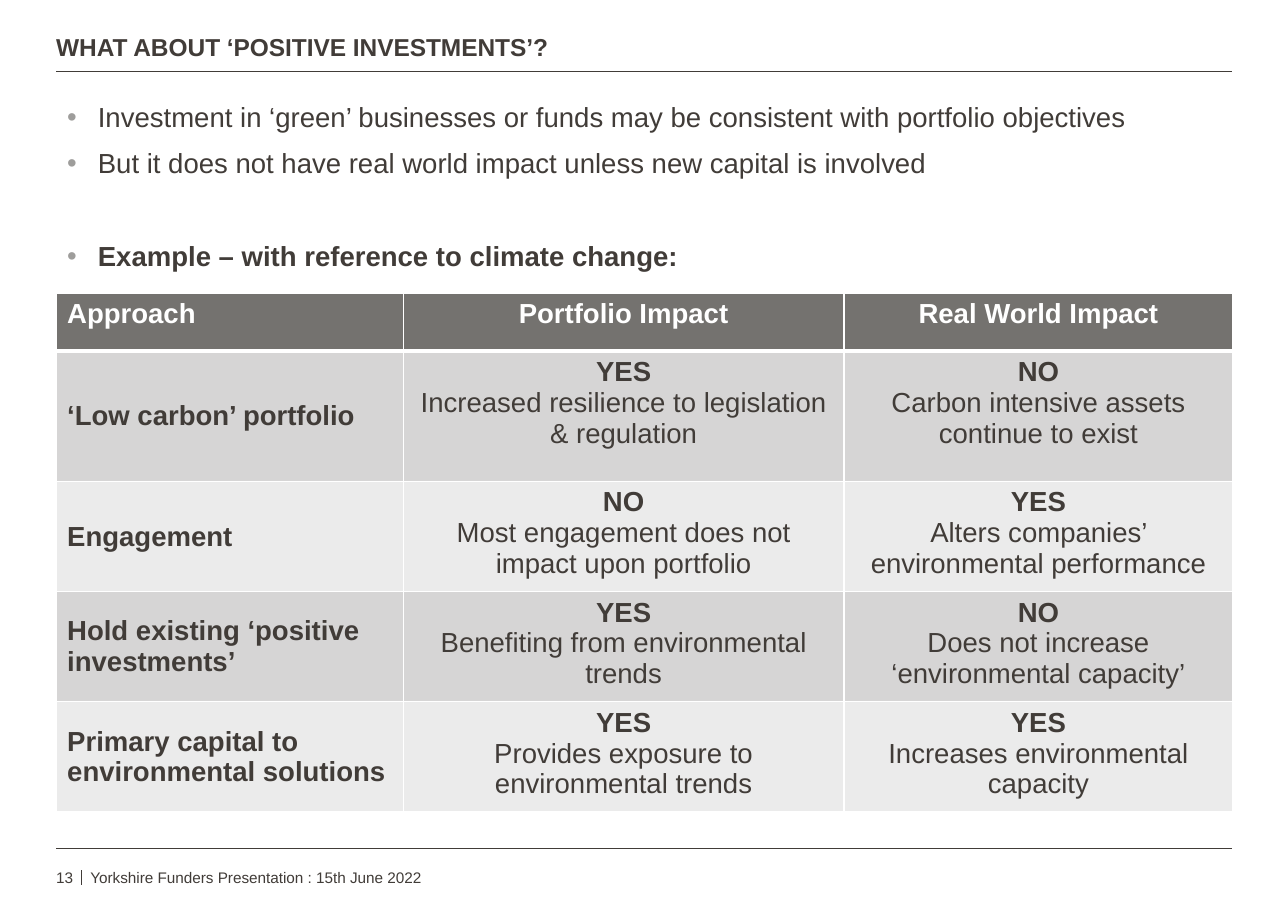
"""Build the slide on positive investments, with its table of approaches and impacts."""
from lxml import etree
from pptx import Presentation
from pptx.dml.color import RGBColor
from pptx.enum.shapes import MSO_CONNECTOR
from pptx.enum.text import MSO_ANCHOR, PP_ALIGN
from pptx.oxml import parse_xml
from pptx.oxml.ns import nsdecls, qn
from pptx.util import Inches, Pt

INK = "413C38"
WHITE = "FFFFFF"
LEFT, RIGHT = 0.51, 11.18


def colour(value):
    return RGBColor.from_string(value)


def style(paragraph, size, bold=False, value=INK):
    paragraph.font.name = "Arial"
    paragraph.font.size = Pt(size)
    paragraph.font.bold = bold
    paragraph.font.color.rgb = colour(value)


deck = Presentation()
deck.slide_width, deck.slide_height = Inches(11.69), Inches(8.27)
slide = deck.slides.add_slide(deck.slide_layouts[6])

rules = [
    (LEFT, 0.65, RIGHT, 0.65, 0.25),
    (LEFT, 7.7, RIGHT, 7.7, 0.25),
    (0.74, 7.9, 0.74, 8.03, 0.5),
]
for x1, y1, x2, y2, weight in rules:
    rule = slide.shapes.add_connector(
        MSO_CONNECTOR.STRAIGHT, Inches(x1), Inches(y1), Inches(x2), Inches(y2))
    rule.line.color.rgb = colour(INK)
    rule.line.width = Pt(weight)
    etree.SubElement(rule._element.spPr, qn("a:effectLst"))

labels = [
    ("WHAT ABOUT ‘POSITIVE INVESTMENTS’?", LEFT, 0.09, 9.58, 0.47, 16, True, MSO_ANCHOR.BOTTOM),
    ("13", LEFT, 7.7, 0.21, 0.53, 10, False, MSO_ANCHOR.MIDDLE),
    ("Yorkshire Funders Presentation : 15th June 2022",
     0.82, 7.7, 7.45, 0.53, 10, False, MSO_ANCHOR.MIDDLE),
]
for text, x, y, width, height, size, bold, anchor in labels:
    label = slide.shapes.add_textbox(
        Inches(x), Inches(y), Inches(width), Inches(height)).text_frame
    label.word_wrap = True
    label.vertical_anchor = anchor
    label.margin_left = label.margin_right = label.margin_top = label.margin_bottom = 0
    label.paragraphs[0].text = text
    label.paragraphs[0].line_spacing = 0.9 if bold else 1.0
    style(label.paragraphs[0], size, bold)

points = [
    ("Investment in ‘green’ businesses or funds may be consistent with portfolio objectives", 0, False),
    ("But it does not have real world impact unless new capital is involved", 11, False),
    ("Example – with reference to climate change:", 41.4, True),
]
introduction = slide.shapes.add_textbox(
    Inches(LEFT), Inches(0.89), Inches(10.68), Inches(1.76)).text_frame
introduction.word_wrap = True
for index, (text, gap, bold) in enumerate(points):
    point = introduction.paragraphs[0] if index == 0 else introduction.add_paragraph()
    point.text = text
    point.line_spacing = 0.9
    point.space_before = Pt(gap)
    properties = point._p.get_or_add_pPr()
    properties.set("marL", str(Inches(0.28)))
    properties.set("indent", str(Inches(-0.28)))
    bullet_colour = etree.SubElement(properties, qn("a:buClr"))
    etree.SubElement(bullet_colour, qn("a:srgbClr"), val="9E9D9B")
    etree.SubElement(properties, qn("a:buFont"), typeface="Arial")
    etree.SubElement(properties, qn("a:buChar"), char="•")
    style(point, 18, bold)

approaches = [
    (["Approach"], ["Portfolio Impact"], ["Real World Impact"]),
    (["‘Low carbon’ portfolio"],
     ["YES", "Increased resilience to legislation\n& regulation"],
     ["NO", "Carbon intensive assets\ncontinue to exist"]),
    (["Engagement"],
     ["NO", "Most engagement does not impact upon portfolio"],
     ["YES", "Alters companies’ environmental performance"]),
    (["Hold existing ‘positive investments’"],
     ["YES", "Benefiting from environmental trends"],
     ["NO", "Does not increase\n‘environmental capacity’"]),
    (["Primary capital to environmental solutions"],
     ["YES", "Provides exposure to\nenvironmental trends"],
     ["YES", "Increases environmental capacity"]),
]
column_widths = [3.15, 4, 3.53]
row_heights = [0.53, 1.18, 0.93, 0.93, 0.93]
impacts = slide.shapes.add_table(
    len(row_heights), len(column_widths), Inches(LEFT), Inches(2.66),
    Inches(sum(column_widths)), Inches(sum(row_heights))).table
for column, width in zip(impacts.columns, column_widths):
    column.width = Inches(width)
for row, height in zip(impacts.rows, row_heights):
    row.height = Inches(height)

for r, approach in enumerate(approaches):
    for c, lines in enumerate(approach):
        cell = impacts.cell(r, c)
        cell.fill.solid()
        cell.fill.fore_color.rgb = colour("74726F" if r == 0 else "D6D5D5" if r % 2 else "EBEBEB")
        cell.vertical_anchor = MSO_ANCHOR.MIDDLE if r and c == 0 else MSO_ANCHOR.TOP
        for i, text in enumerate(lines):
            line = cell.text_frame.paragraphs[0] if i == 0 else cell.text_frame.add_paragraph()
            line.text = text
            line.alignment = PP_ALIGN.CENTER if c else PP_ALIGN.LEFT
            style(line, 18, i == 0, INK if r else WHITE)
        for position, side in enumerate("LRTB"):
            thick = (r == 0 and side == "B") or (r == 1 and side == "T")
            cell._tc.get_or_add_tcPr().insert(position, parse_xml(
                f'<a:ln{side} {nsdecls("a")} w="{Pt(3 if thick else 1)}"><a:solidFill>'
                f'<a:srgbClr val="{WHITE}"/></a:solidFill></a:ln{side}>'))

deck.save("out.pptx")
